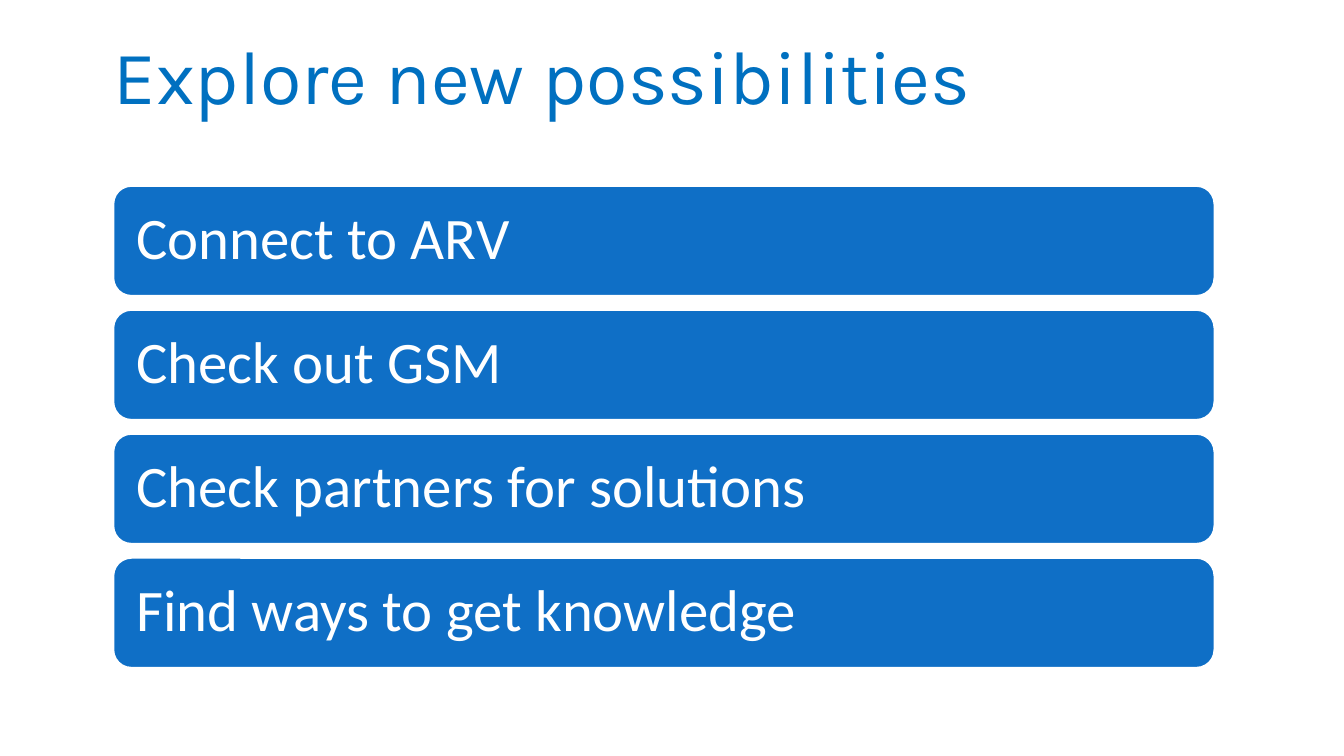
from dataclasses import dataclass

from pptx import Presentation
from pptx.dml.color import RGBColor
from pptx.enum.shapes import MSO_SHAPE
from pptx.enum.text import MSO_ANCHOR, PP_ALIGN
from pptx.util import Inches, Pt


@dataclass(frozen=True)
class Theme:
    white: str = "FFFFFF"
    bar_blue: str = "0F6FC6"
    title_blue: str = "0070C0"
    title_font: str = "Karla"
    body_font: str = "Calibri"
    title_size: int = 54
    body_size: int = 42


def write_text(frame, text, *, font, size, color, line_spacing):
    frame.word_wrap = True
    frame.vertical_anchor = MSO_ANCHOR.MIDDLE
    para = frame.paragraphs[0]
    para.alignment = PP_ALIGN.LEFT
    para.line_spacing = line_spacing
    span = para.add_run()
    span.text = text
    span.font.name = font
    span.font.size = Pt(size)
    span.font.color.rgb = RGBColor.from_string(color)


class SlideBuilder:
    def __init__(self, page, theme):
        self.page = page
        self.theme = theme

    def background(self):
        fill = self.page.background.fill
        fill.solid()
        fill.fore_color.rgb = RGBColor.from_string(self.theme.white)

    def title(self, text, left, top, width, height):
        box = self.page.shapes.add_textbox(
            Inches(left), Inches(top), Inches(width), Inches(height))
        write_text(box.text_frame, text, font=self.theme.title_font,
                   size=self.theme.title_size, color=self.theme.title_blue,
                   line_spacing=0.8)

    def bar(self, text, left, top, width, height):
        bar = self.page.shapes.add_shape(
            MSO_SHAPE.ROUNDED_RECTANGLE,
            Inches(left), Inches(top), Inches(width), Inches(height))
        bar.shadow.inherit = False
        bar.fill.solid()
        bar.fill.fore_color.rgb = RGBColor.from_string(self.theme.bar_blue)
        bar.line.color.rgb = RGBColor.from_string(self.theme.white)
        bar.line.width = Pt(2)
        frame = bar.text_frame
        frame.margin_left = frame.margin_right = Inches(0.18)
        frame.margin_top = frame.margin_bottom = Inches(0.17)
        write_text(frame, text, font=self.theme.body_font,
                   size=self.theme.body_size, color=self.theme.white,
                   line_spacing=0.9)


def main():
    deck = Presentation()
    deck.slide_width = Inches(13.33)
    deck.slide_height = Inches(7.5)
    page = deck.slides.add_slide(deck.slide_layouts[6])
    builder = SlideBuilder(page, Theme())
    builder.background()

    steps = ("Connect to ARV", "Check out GSM",
             "Check partners for solutions", "Find ways to get knowledge")
    first_top, pitch = 1.84, 1.23
    for index, step in enumerate(steps):
        builder.bar(step, 1.12, first_top + index * pitch, 10.93, 1.1)
    builder.title("Explore new possibilities", 1.03, 0.41, 11.79, 0.83)

    deck.save("out.pptx")


if __name__ == "__main__":
    main()
